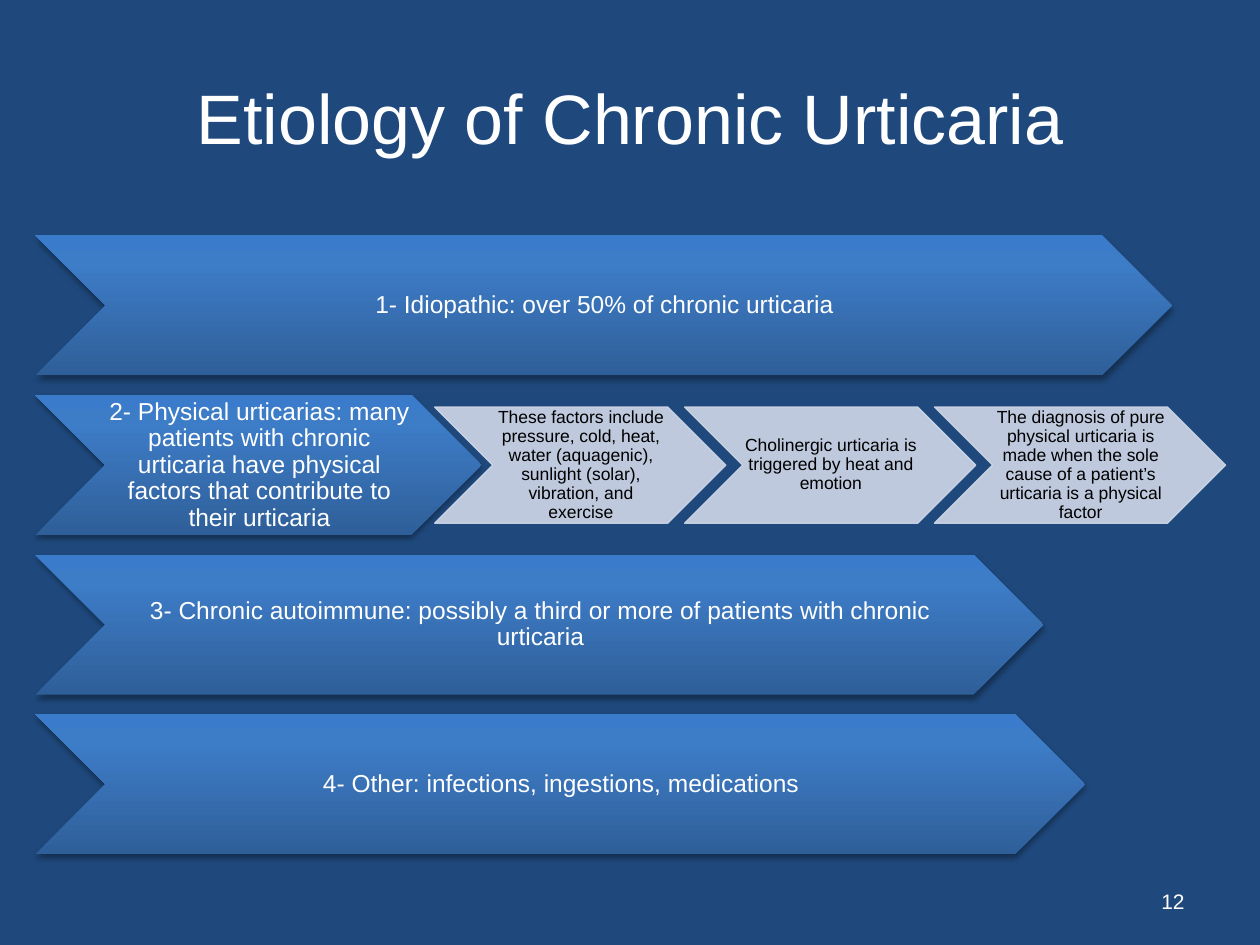
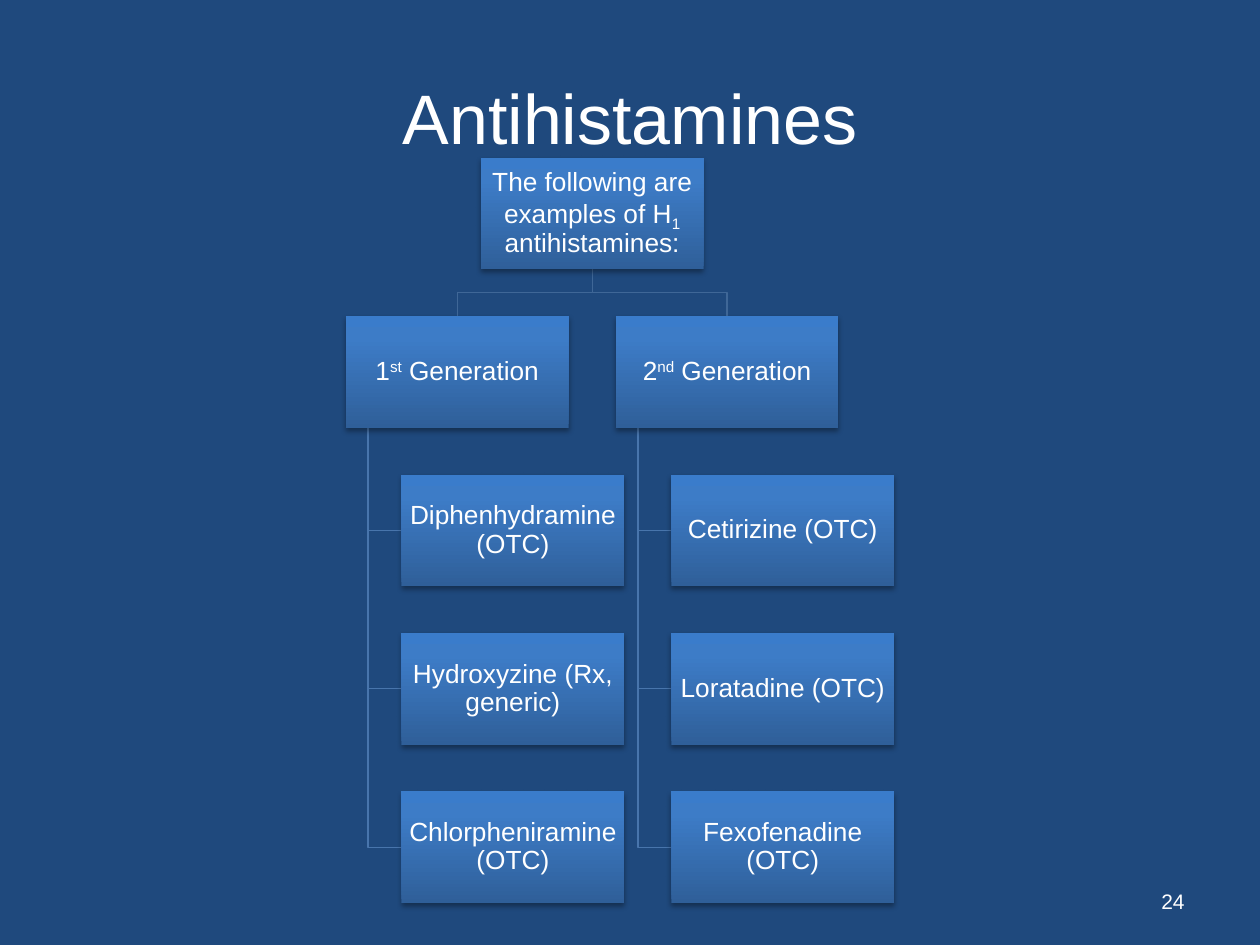
from dataclasses import dataclass
from typing import NamedTuple

import lxml.etree
import pptx
import pptx.dml.color
import pptx.enum.shapes
import pptx.enum.text
import pptx.oxml.ns
import pptx.util

Pt = pptx.util.Pt
Color = pptx.dml.color.RGBColor.from_string
Kind = pptx.enum.shapes.MSO_SHAPE
Align = pptx.enum.text.PP_ALIGN
Middle = pptx.enum.text.MSO_ANCHOR.MIDDLE
qn = pptx.oxml.ns.qn

FONT = "Arial"
HEX = {
    "back": "1F497D", "white": "FFFFFF", "black": "000000", "pale": "D0D8E8",
    "low": "2F5F99", "mid": "3D7CC7", "high": "3A7CCB",
    "trunk": "3F6797", "twig": "4875AC",
}
FADE = [(0, "low"), (80, "mid"), (100, "high")]


class Box(NamedTuple):
    left: float
    top: float
    width: float
    height: float


class Part(NamedTuple):
    text: str
    base: int = 0  # percent above (+) or below (-) the baseline


@dataclass(frozen=True)
class Look:
    kind: int
    size: float
    ink: str = "white"
    glossy: bool = True
    left: float = 0.7
    right: float = 0.7


@dataclass(frozen=True)
class Bar:
    text: str
    width: float
    notes: tuple[str, ...] = ()


@dataclass(frozen=True)
class Group:
    head: list[Part]
    drugs: tuple[str, ...]


BAR = Look(Kind.CHEVRON, 14, left=1.3, right=0)
NOTE = Look(Kind.CHEVRON, 10, "black", False, right=0)
NODE = Look(Kind.RECTANGLE, 15)

BARS = [
    Bar("1- Idiopathic: over 50% of chronic urticaria", 649.4),
    Bar("2- Physical urticarias: many patients with chronic urticaria have "
        "physical factors that contribute to their urticaria", 254.9, (
            "These factors include pressure, cold, heat, water (aquagenic), "
            "sunlight (solar), vibration, and exercise",
            "Cholinergic urticaria is triggered by heat and emotion",
            "The diagnosis of pure physical urticaria is made when the sole "
            "cause of a patient’s urticaria is a physical factor")),
    Bar("3- Chronic autoimmune: possibly a third or more of patients with "
        "chronic urticaria", 576),
    Bar("4- Other: infections, ingestions, medications", 599.8),
]

ROOT = [Part("The following are examples of H"), Part("1", -25),
        Part(" antihistamines:")]
GROUPS = [
    Group([Part("1"), Part("st", 30), Part(" Generation")],
          ("Diphenhydramine (OTC)", "Hydroxyzine (Rx, generic)",
           "Chlorpheniramine (OTC)")),
    Group([Part("2"), Part("nd", 30), Part(" Generation")],
          ("Cetirizine (OTC)", "Loratadine (OTC)", "Fexofenadine (OTC)")),
]


def add(parent, tag: str, **attrs):
    """Append an XML child such as a:gs and return it."""
    return lxml.etree.SubElement(
        parent, qn(tag), {key: str(val) for key, val in attrs.items()})


def write(frame, parts: list[Part], size: float, ink: str, align) -> None:
    frame.word_wrap = True
    frame.vertical_anchor = Middle
    para = frame.paragraphs[0]
    para.alignment = align
    para.font.name = FONT
    para.font.size = Pt(size)
    para.font.color.rgb = Color(HEX[ink])
    for part in parts:
        run = para.add_run()
        run.text = part.text
        if part.base:
            run.font._element.set("baseline", str(part.base * 1000))


def label(slide, text: str, box: Box, size: float, align) -> None:
    area = slide.shapes.add_textbox(*map(Pt, box))
    write(area.text_frame, [Part(text)], size, "white", align)


def gloss(shape) -> None:
    """Give a shape the shared blue fade and soft drop shadow."""
    shape.fill.gradient()
    shape.fill.gradient_angle = 90
    stops = shape._element.spPr.find(".//" + qn("a:gsLst"))
    for stop in list(stops):
        stops.remove(stop)
    for spot, name in FADE:
        add(add(stops, "a:gs", pos=spot * 1000), "a:srgbClr", val=HEX[name])
    shape.line.fill.background()
    glow = add(shape._element.spPr.find(qn("a:effectLst")), "a:outerShdw",
               blurRad=Pt(3.1), dist=Pt(1.8), dir=90 * 60000, rotWithShape=0)
    add(add(glow, "a:srgbClr", val=HEX["black"]), "a:alpha", val=35000)


def veil(shape) -> None:
    """Give a shape the pale, slightly clear fill and outline."""
    shape.fill.solid()
    shape.line.width = Pt(0.75)
    for paint in (shape.fill.fore_color, shape.line.color):
        paint.rgb = Color(HEX["pale"])
    for tint in shape._element.spPr.iter(qn("a:srgbClr")):
        add(tint, "a:alpha", val=90000)


def block(slide, box: Box, parts: list[Part], look: Look) -> None:
    shape = slide.shapes.add_shape(look.kind, *map(Pt, box))
    shape.shadow.inherit = False
    (gloss if look.glossy else veil)(shape)
    frame = shape.text_frame
    frame.margin_left, frame.margin_right = Pt(look.left), Pt(look.right)
    frame.margin_top = frame.margin_bottom = Pt(0.7)
    write(frame, parts, look.size, look.ink, Align.CENTER)
    frame.paragraphs[0].line_spacing = 0.9


def wire(slide, spots: list[tuple[float, float]], ink: str) -> None:
    """Draw an open bent line through the spots."""
    start, *rest = [(Pt(x), Pt(y)) for x, y in spots]
    pen = slide.shapes.build_freeform(*start)
    pen.add_line_segments(rest, close=False)
    shape = pen.convert_to_shape()
    shape.shadow.inherit = False
    shape.fill.background()
    shape.line.color.rgb = Color(HEX[ink])
    shape.line.width = Pt(0.75)


def begin(deck, title: str, number: int):
    """Add a slide with its title and page number."""
    slide = deck.slides.add_slide(deck.slide_layouts[6])
    label(slide, title, Box(36, 21.6, 648, 90), 40, Align.CENTER)
    label(slide, str(number), Box(516, 500.5, 168, 28.8), 12, Align.RIGHT)
    return slide


def causes(deck) -> None:
    slide = begin(deck, "Etiology of Chronic Urticaria", 12)
    left, top, high, step = 20.2, 134.6, 80, 91.2
    first, wide, low, pitch = 248.4, 166.4, 66.4, 142.8
    for row, bar in enumerate(BARS):
        y = top + row * step
        block(slide, Box(left, y, bar.width, high), [Part(bar.text)], BAR)
        for col, note in enumerate(bar.notes):
            box = Box(first + col * pitch, y + (high - low) / 2, wide, low)
            block(slide, box, [Part(note)], NOTE)


def drugs(deck) -> None:
    slide = begin(deck, "Antihistamines", 24)
    wide, high, step, top = 127.4, 63.8, 90.5, 90.2
    mid, pitch, indent = 338.4, 154.2, 31.8
    rows = [top + level * step for level in range(5)]
    nodes = [(Box(mid - wide / 2, top, wide, high), ROOT)]
    fork = (top + high + rows[1]) / 2
    for col, group in enumerate(GROUPS):
        axis = mid + (col - 0.5) * pitch
        left = axis - wide / 2
        stem, leaf = left + wide / 10, left + indent
        wire(slide, [(mid, top + high), (mid, fork), (axis, fork),
                     (axis, rows[1])], "trunk")
        nodes.append((Box(left, rows[1], wide, high), group.head))
        for y, drug in zip(rows[2:], group.drugs):
            turn = y + high / 2
            wire(slide, [(stem, rows[1] + high), (stem, turn), (leaf, turn)],
                 "twig")
            nodes.append((Box(leaf, y, wide, high), [Part(drug)]))
    for box, parts in nodes:
        block(slide, box, parts, NODE)


def main() -> None:
    deck = pptx.Presentation()
    deck.slide_width, deck.slide_height = Pt(720), Pt(540)
    fill = deck.slide_master.background.fill
    fill.solid()
    fill.fore_color.rgb = Color(HEX["back"])
    causes(deck)
    drugs(deck)
    deck.save("out.pptx")


if __name__ == "__main__":
    main()
